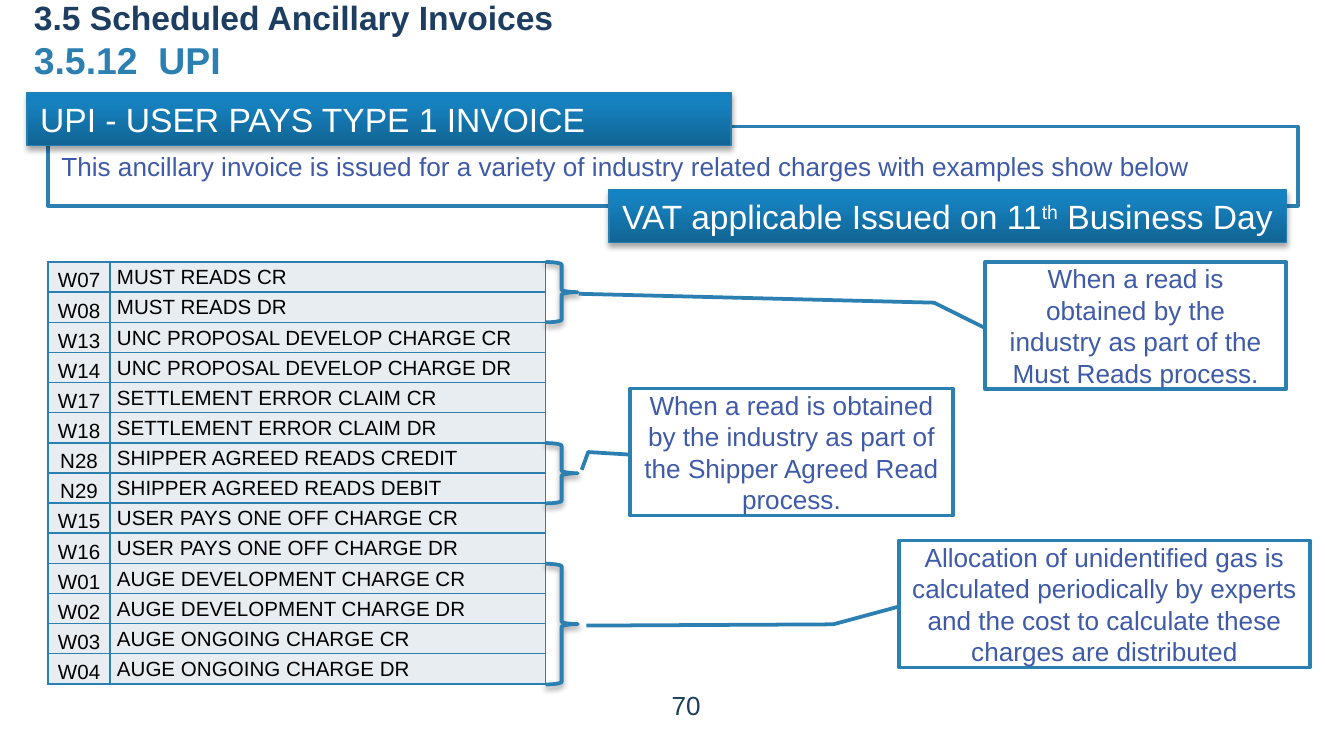
"""Build the slide on the UPI ancillary invoice and its charge codes."""
from dataclasses import dataclass

from lxml import etree
from pptx import Presentation
from pptx import util as u
from pptx.dml.color import RGBColor
from pptx.enum import shapes, text
from pptx.oxml.ns import qn


@dataclass(frozen=True)
class Theme:
    """Colours, type sizes and line widths of the slide."""
    font: str = "Arial"
    navy: str = "1D3E61"
    blue: str = "2B80B1"
    body: str = "3E5AA8"
    black: str = "000000"
    white: str = "FFFFFF"
    cell: str = "E8EDF2"
    banner_line: str = "277EB0"
    banner_stops: tuple = ((0, "116493"), (80, "1681BF"), (100, "1383C3"))
    subtitle_size: int = 20
    heading_size: int = 18
    body_size: int = 14
    cell_size: int = 11
    outline: float = 2
    hairline: float = 0.75
    grid: float = 1


THEME = Theme()
TABLE_LEFT, TABLE_TOP, ROW_HEIGHT = 0.91, 4.95, 0.57
COLUMN_WIDTHS = (1.17, 8.23)

CHARGES = (
    ("W07", "MUST READS CR"),
    ("W08", "MUST READS DR"),
    ("W13", "UNC PROPOSAL DEVELOP CHARGE CR"),
    ("W14", "UNC PROPOSAL DEVELOP CHARGE DR"),
    ("W17", "SETTLEMENT ERROR CLAIM CR"),
    ("W18", "SETTLEMENT ERROR CLAIM DR"),
    ("N28", "SHIPPER AGREED READS CREDIT"),
    ("N29", "SHIPPER AGREED READS DEBIT"),
    ("W15", "USER PAYS ONE OFF CHARGE CR"),
    ("W16", "USER PAYS ONE OFF CHARGE DR"),
    ("W01", "AUGE DEVELOPMENT CHARGE CR"),
    ("W02", "AUGE DEVELOPMENT CHARGE DR"),
    ("W03", "AUGE ONGOING CHARGE CR"),
    ("W04", "AUGE ONGOING CHARGE DR"),
)
BRACED_ROWS = ((10, 4), (0, 2), (6, 2))
NOTES = (
    ("When a read is obtained by the industry as part of the Must Reads process.",
     (18.62, 4.95, 5.69, 2.4), (0.52, 0, 0.32, -0.17, 0.25, -1.35)),
    ("Allocation of unidentified gas is calculated periodically by experts "
     "and the cost to calculate these charges are distributed",
     (16.99, 10.21, 7.77, 2.4), (0.52, 0, 0.66, -0.16, 0.67, -0.76)),
    ("When a read is obtained by the industry as part of the Shipper Agreed Read process.",
     (11.91, 7.34, 6.1, 2.4), (0.52, 0, 0.5, -0.13, 0.64, -0.15)),
)


def rgb(colour):
    """Turn a hex string into a colour."""
    return RGBColor.from_string(colour)


def cm_box(box):
    """Turn left, top, width and height in centimetres into lengths."""
    return [u.Cm(length) for length in box]


def add_run(paragraph, words, size, colour, bold=False):
    """Add one formatted run and return it."""
    run = paragraph.add_run()
    run.text = words
    run.font.name = THEME.font
    run.font.size = u.Pt(size)
    run.font.bold = bold
    run.font.color.rgb = rgb(colour)
    return run


def first_paragraph(frame, alignment):
    """Set up a wrapped, middle-anchored frame and return its paragraph."""
    frame.word_wrap = True
    frame.auto_size = text.MSO_AUTO_SIZE.NONE
    frame.vertical_anchor = text.MSO_ANCHOR.MIDDLE
    frame.paragraphs[0].alignment = alignment
    return frame.paragraphs[0]


def add_outlined(slide, preset, box, line=THEME.blue, width=THEME.outline):
    """Add a preset shape with an outline and no shadow."""
    shape = slide.shapes.add_shape(preset, *cm_box(box))
    shape.shadow.inherit = False
    shape.line.color.rgb = rgb(line)
    shape.line.width = u.Pt(width)
    return shape


def add_shadow(shape, opacity):
    """Give a shape a soft shadow that falls straight down."""
    effects = shape._element.spPr.find(qn("a:effectLst"))
    shadow = etree.SubElement(effects, qn("a:outerShdw"), blurRad="40000",
                              dist="23000", dir="5400000", rotWithShape="0")
    colour = etree.SubElement(shadow, qn("a:srgbClr"), val=THEME.black)
    etree.SubElement(colour, qn("a:alpha"), val=str(opacity * 1000))


def add_title(slide):
    """Fill the title placeholder with the section and invoice headings."""
    title = slide.shapes.title
    title.left, title.top, title.width, title.height = cm_box((0.64, -0.25, 24.13, 2))
    frame = title.text_frame
    frame.margin_left = frame.margin_right = frame.margin_top = frame.margin_bottom = 0
    heading = first_paragraph(frame, text.PP_ALIGN.LEFT)
    add_run(heading, "3.5 Scheduled Ancillary Invoices", THEME.heading_size, THEME.navy, True)
    heading.add_line_break()
    add_run(heading, "3.5.12  UPI", THEME.subtitle_size, THEME.blue, True)


def add_panel(slide, preset, box, words, alignment):
    """Add a white outlined shape with body text."""
    panel = add_outlined(slide, preset, box)
    panel.fill.solid()
    panel.fill.fore_color.rgb = rgb(THEME.white)
    paragraph = first_paragraph(panel.text_frame, alignment)
    add_run(paragraph, words, THEME.body_size, THEME.body)
    return panel


def add_banner(slide, box):
    """Add a gradient banner and return its paragraph."""
    banner = add_outlined(slide, shapes.MSO_SHAPE.RECTANGLE, box,
                          THEME.banner_line, THEME.hairline)
    banner.fill.gradient()
    banner.fill.gradient_angle = 90
    stops = banner._element.spPr.find(qn("a:gradFill")).find(qn("a:gsLst"))
    for stop in list(stops):
        stops.remove(stop)
    for position, colour in THEME.banner_stops:
        stop = etree.SubElement(stops, qn("a:gs"), pos=str(position * 1000))
        etree.SubElement(stop, qn("a:srgbClr"), val=colour)
    add_shadow(banner, 35)
    banner.text_frame.margin_right = 0
    return first_paragraph(banner.text_frame, text.PP_ALIGN.LEFT)


def add_borders(cell):
    """Draw the four borders of a table cell."""
    properties = cell._tc.get_or_add_tcPr()
    for index, side in enumerate(("a:lnL", "a:lnR", "a:lnT", "a:lnB")):
        border = etree.Element(qn(side), w=str(u.Pt(THEME.grid)))
        fill = etree.SubElement(border, qn("a:solidFill"))
        etree.SubElement(fill, qn("a:srgbClr"), val=THEME.blue)
        properties.insert(index, border)


def add_charges(slide):
    """Add the table of charge codes."""
    box = (TABLE_LEFT, TABLE_TOP, sum(COLUMN_WIDTHS), ROW_HEIGHT * len(CHARGES))
    table = slide.shapes.add_table(len(CHARGES), len(COLUMN_WIDTHS), *cm_box(box)).table
    table.first_row = table.horz_banding = False
    for column, width in zip(table.columns, COLUMN_WIDTHS):
        column.width = u.Cm(width)
    styles = ((text.PP_ALIGN.CENTER, text.MSO_ANCHOR.BOTTOM, 0.02),
              (text.PP_ALIGN.LEFT, text.MSO_ANCHOR.MIDDLE, 0.13))
    for row, charge in zip(table.rows, CHARGES):
        row.height = u.Cm(ROW_HEIGHT)
        for cell, words, (alignment, anchor, indent) in zip(row.cells, charge, styles):
            cell.fill.solid()
            cell.fill.fore_color.rgb = rgb(THEME.cell)
            cell.margin_left = u.Cm(indent)
            cell.margin_right = cell.margin_top = u.Cm(0.02)
            cell.margin_bottom = 0
            cell.vertical_anchor = anchor
            paragraph = cell.text_frame.paragraphs[0]
            paragraph.alignment = alignment
            add_run(paragraph, words, THEME.cell_size, THEME.black)
            add_borders(cell)


def add_brace(slide, first_row, row_count):
    """Bracket a group of table rows on their right."""
    box = (TABLE_LEFT + sum(COLUMN_WIDTHS), TABLE_TOP + first_row * ROW_HEIGHT,
           0.61, row_count * ROW_HEIGHT)
    brace = add_outlined(slide, shapes.MSO_SHAPE.RIGHT_BRACE, box)
    brace.fill.background()
    add_shadow(brace, 38)


def add_note(slide, words, box, pointer):
    """Add a callout whose pointer runs to a brace."""
    note = add_panel(slide, shapes.MSO_SHAPE.LINE_CALLOUT_2, box, words, text.PP_ALIGN.CENTER)
    for index, value in enumerate(pointer):
        note.adjustments[index] = value


def add_page_number(slide):
    """Add the page number at the foot."""
    footer = slide.shapes.add_textbox(*cm_box((7.14, 13.13, 11.66, 0.36)))
    paragraph = first_paragraph(footer.text_frame, text.PP_ALIGN.CENTER)
    add_run(paragraph, "70", THEME.body_size, THEME.navy)


def main():
    """Build and save the slide."""
    deck = Presentation()
    deck.slide_width, deck.slide_height = u.Cm(25.4), u.Cm(14.28)
    slide = deck.slides.add_slide(deck.slide_layouts[5])
    add_title(slide)
    add_panel(slide, shapes.MSO_SHAPE.RECTANGLE, (0.91, 2.39, 23.62, 1.5),
              "This ancillary invoice is issued for a variety of industry related "
              "charges with examples show below", text.PP_ALIGN.JUSTIFY)
    invoice = add_banner(slide, (0.51, 1.75, 13.31, 1))
    add_run(invoice, "UPI - USER PAYS TYPE 1 INVOICE", THEME.heading_size, THEME.white)
    add_page_number(slide)
    issue = add_banner(slide, (11.51, 3.58, 12.8, 1))
    add_run(issue, "VAT applicable Issued on 11", THEME.heading_size, THEME.white)
    ordinal = add_run(issue, "th", THEME.heading_size, THEME.white)
    ordinal._r.get_or_add_rPr().set("baseline", "30000")
    add_run(issue, " Business Day", THEME.heading_size, THEME.white)
    add_charges(slide)
    for first_row, row_count in BRACED_ROWS:
        add_brace(slide, first_row, row_count)
    for words, box, pointer in NOTES:
        add_note(slide, words, box, pointer)
    deck.save("out.pptx")


if __name__ == "__main__":
    main()
